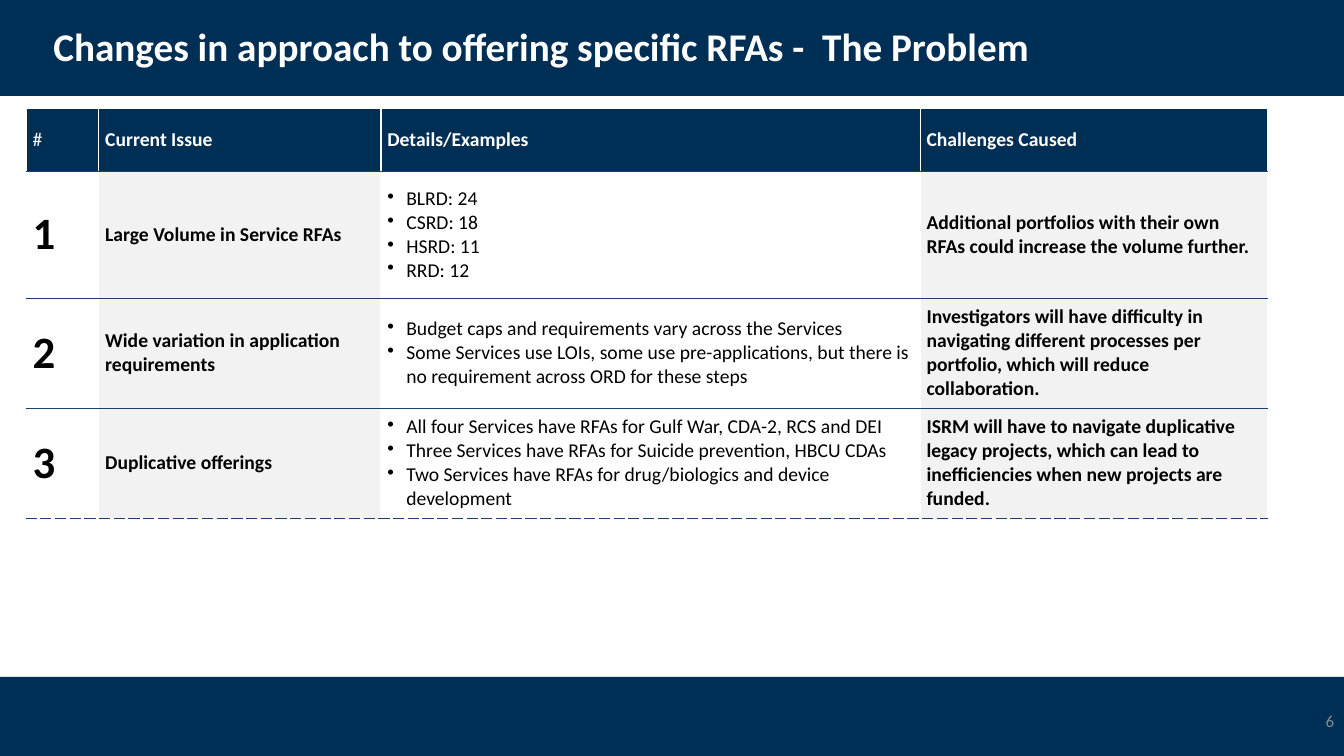
from dataclasses import dataclass
from typing import Any

import pptx
import pptx.dml.color
import pptx.enum.text
import pptx.oxml
import pptx.oxml.ns
import pptx.util
from pptx.util import Cm

COLOURS = {
    "navy": "002F56",
    "rule": "1D3D78",
    "shade": "F2F2F2",
    "white": "FFFFFF",
    "black": "000000",
    "grey": "8C8C8C",
}
FONT = "Calibri"
PAGE_WIDTH, PAGE_HEIGHT = 33.87, 19.05
COLUMN_WIDTHS = (1.83, 7.11, 13.59, 8.76)
ROW_HEIGHTS = (1.57, 3.2, 2.77, 2.77)
HEADINGS = ("#", "Current Issue", "Details/Examples", "Challenges Caused")
ALIGN = pptx.enum.text.PP_ALIGN
MIDDLE = pptx.enum.text.MSO_ANCHOR.MIDDLE


@dataclass(frozen=True)
class Band:
    top: float
    height: float


@dataclass(frozen=True)
class Issue:
    name: str
    details: tuple[str, ...]
    challenge: str


BANDS = (Band(0, 2.42), Band(17.06, 1.99))
ISSUES = (
    Issue(
        "Large Volume in Service RFAs",
        ("BLRD: 24", "CSRD: 18", "HSRD: 11", "RRD: 12"),
        "Additional portfolios with their own RFAs could increase the volume further.",
    ),
    Issue(
        "Wide variation in application requirements",
        (
            "Budget caps and requirements vary across the Services",
            "Some Services use LOIs, some use pre-applications, "
            "but there is no requirement across ORD for these steps",
        ),
        "Investigators will have difficulty in navigating different processes "
        "per portfolio, which will reduce collaboration.",
    ),
    Issue(
        "Duplicative offerings",
        (
            "All four Services have RFAs for Gulf War, CDA-2, RCS and DEI",
            "Three Services have RFAs for Suicide prevention, HBCU CDAs",
            "Two Services have RFAs for drug/biologics and device development",
        ),
        "ISRM will have to navigate duplicative legacy projects, "
        "which can lead to inefficiencies when new projects are funded.",
    ),
)


def colour(name: str) -> pptx.dml.color.RGBColor:
    return pptx.dml.color.RGBColor.from_string(COLOURS[name])


def write(frame: Any, *lines: str, size: float = 14, ink: str = "black",
          bold: bool = False, bullet: bool = False, spacing: float = 1.0,
          align: Any = ALIGN.LEFT) -> None:
    """Fill a text frame with one paragraph per line."""
    frame.word_wrap = True
    for index, line in enumerate(lines):
        para = frame.add_paragraph() if index else frame.paragraphs[0]
        para.alignment = align
        para.line_spacing = spacing
        para.space_before = pptx.util.Pt(0)
        if bullet:
            properties = para._p.get_or_add_pPr()
            properties.set("marL", str(Cm(0.48)))
            properties.set("indent", str(-Cm(0.48)))
            mark = pptx.oxml.parse_xml(
                f'<a:buChar {pptx.oxml.ns.nsdecls("a")} char="•"/>')
            properties.append(mark)
        span = para.add_run()
        span.text = line
        span.font.name = FONT
        span.font.size = pptx.util.Pt(size)
        span.font.bold = bold
        span.font.color.rgb = colour(ink)


def add_border(cell: Any, side: str, ink: str, width: float,
               dash: str = "solid") -> None:
    line = pptx.oxml.parse_xml(
        f'<a:ln{side} {pptx.oxml.ns.nsdecls("a")} w="{pptx.util.Pt(width)}">'
        f'<a:solidFill><a:srgbClr val="{COLOURS[ink]}"/></a:solidFill>'
        f'<a:prstDash val="{dash}"/></a:ln{side}>')
    cell._tc.get_or_add_tcPr().append(line)


def format_cell(cell: Any, row: int, fill: str) -> None:
    cell.vertical_anchor = MIDDLE
    cell.margin_left = cell.margin_right = Cm(0.16)
    cell.margin_top = cell.margin_bottom = Cm(0.08)
    add_border(cell, "L", "white", 1)
    add_border(cell, "R", "white", 1)
    if row:
        add_border(cell, "T", "rule", 0.5)
    else:
        add_border(cell, "T", "white", 1)
    add_border(cell, "B", "rule", 0.5, "dash" if row == len(ISSUES) else "solid")
    cell.fill.solid()
    cell.fill.fore_color.rgb = colour(fill)


def add_bands(page: Any) -> None:
    for band in BANDS:
        shape = page.shapes.add_shape(
            pptx.enum.shapes.MSO_SHAPE.RECTANGLE,
            Cm(0), Cm(band.top), Cm(PAGE_WIDTH), Cm(band.height))
        shape.shadow.inherit = False
        shape.fill.solid()
        shape.fill.fore_color.rgb = colour("navy")
        shape.line.fill.background()
        # Keep the title in front of the bands
        page.shapes.title.element.addprevious(shape.element)


def add_title(page: Any) -> None:
    title = page.shapes.title
    title.left, title.top = Cm(1.09), Cm(0.28)
    title.width, title.height = Cm(29.21), Cm(1.88)
    title.text_frame.vertical_anchor = MIDDLE
    title.text_frame.auto_size = pptx.enum.text.MSO_AUTO_SIZE.NONE
    write(title.text_frame,
          "Changes in approach to offering specific RFAs -  The Problem",
          size=28, ink="white", bold=True, spacing=0.9)


def add_issue_table(page: Any) -> None:
    table = page.shapes.add_table(
        len(ROW_HEIGHTS), len(COLUMN_WIDTHS), Cm(0.66), Cm(2.74),
        Cm(sum(COLUMN_WIDTHS)), Cm(sum(ROW_HEIGHTS))).table
    table.horz_banding = False
    for column, width in zip(table.columns, COLUMN_WIDTHS):
        column.width = Cm(width)
    for row, height in zip(table.rows, ROW_HEIGHTS):
        row.height = Cm(height)

    # Heading row
    for index, heading in enumerate(HEADINGS):
        cell = table.cell(0, index)
        format_cell(cell, 0, "navy")
        write(cell.text_frame, heading, ink="white", bold=index > 0)

    # Issue rows
    for row, issue in enumerate(ISSUES, start=1):
        cells = [table.cell(row, index) for index in range(len(HEADINGS))]
        for index, cell in enumerate(cells):
            format_cell(cell, row, "shade" if index % 2 else "white")
        number, name, details, challenge = (cell.text_frame for cell in cells)
        write(number, str(row), size=32, bold=True)
        write(name, issue.name, bold=True)
        write(details, *issue.details, bullet=True)
        write(challenge, issue.challenge, bold=True)


def add_page_number(page: Any) -> None:
    box = page.shapes.add_textbox(Cm(26.25), Cm(17.65), Cm(7.62), Cm(1.02))
    box.text_frame.vertical_anchor = MIDDLE
    write(box.text_frame, "6", size=12, ink="grey", align=ALIGN.RIGHT)


def main() -> None:
    deck = pptx.Presentation()
    deck.slide_width, deck.slide_height = Cm(PAGE_WIDTH), Cm(PAGE_HEIGHT)
    page = deck.slides.add_slide(deck.slide_layouts.get_by_name("Title Only"))
    add_bands(page)
    add_title(page)
    add_issue_table(page)
    add_page_number(page)
    deck.save("out.pptx")


if __name__ == "__main__":
    main()
